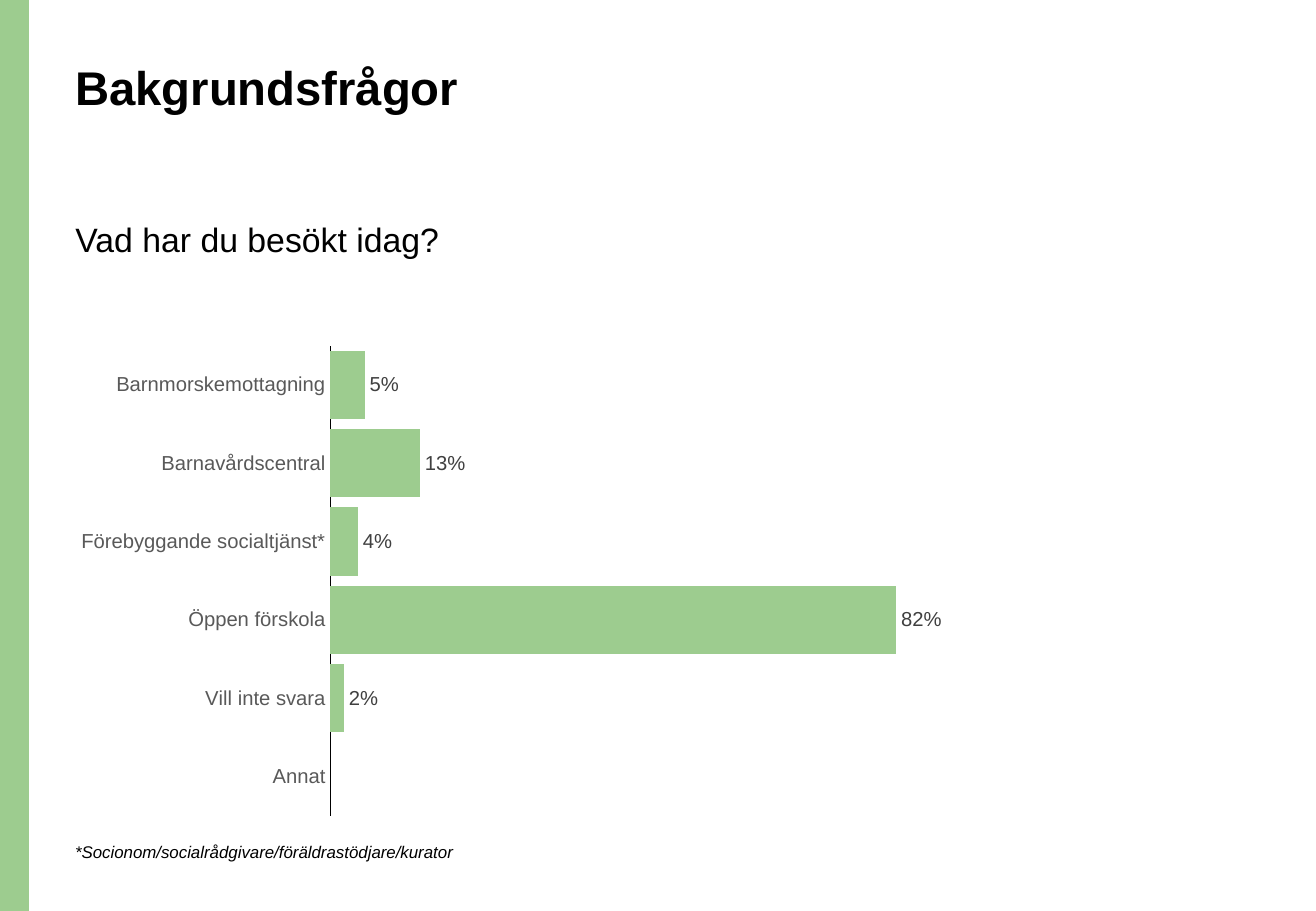
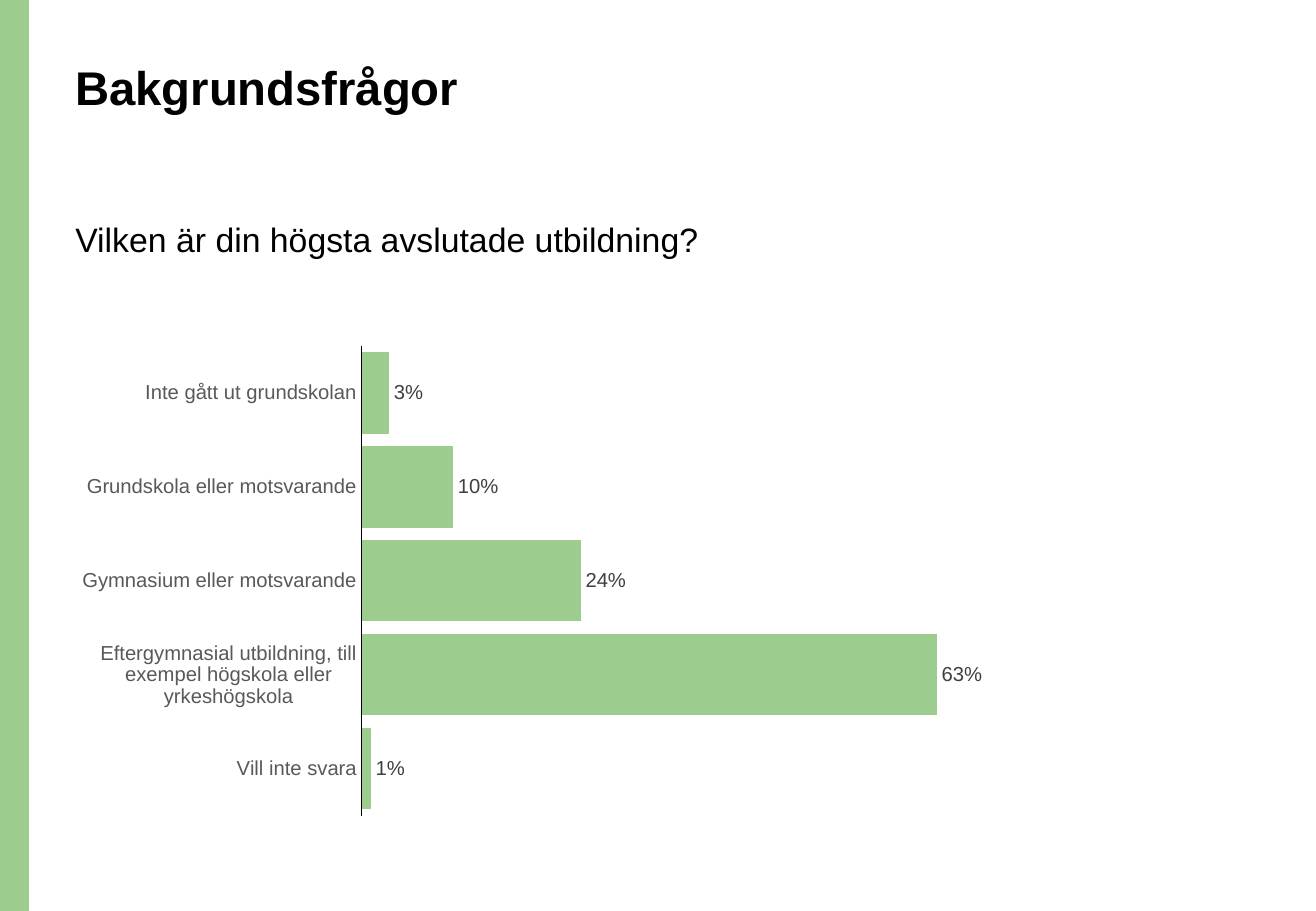
from pptx import Presentation
from pptx.chart.data import CategoryChartData
from pptx.dml.color import RGBColor
from pptx.enum.chart import XL_CHART_TYPE, XL_LABEL_POSITION, XL_TICK_MARK
from pptx.enum.shapes import MSO_SHAPE
from pptx.enum.text import MSO_ANCHOR, MSO_AUTO_SIZE, PP_ALIGN
from pptx.util import Inches, Pt
from lxml import etree

BAR = XL_CHART_TYPE.BAR_CLUSTERED
OUT_END = XL_LABEL_POSITION.OUTSIDE_END
NO_TICK = XL_TICK_MARK.NONE
RECT = MSO_SHAPE.RECTANGLE
TOP = MSO_ANCHOR.TOP
GROW = MSO_AUTO_SIZE.SHAPE_TO_FIT_TEXT
LEFT = PP_ALIGN.LEFT

GREEN = RGBColor(0x9D, 0xCC, 0x8F)
BLACK = RGBColor(0, 0, 0)
GREY = RGBColor(0x59, 0x59, 0x59)
DARK = RGBColor(0x40, 0x40, 0x40)
FONT = "Arial"

WIDTH, HEIGHT = Inches(10.83), Inches(7.5)
MARGIN = 4.8  # percent of the slide's width
TITLE = "Bakgrundsfrågor"

PAGES = [
    dict(
        ask="Vad har du besökt idag?",
        ask_w=60,
        chart_w=68.9,
        top=0.9,
        data={
            "Barnmorskemottagning": 0.05,
            "Barnavårdscentral": 0.13,
            "Förebyggande socialtjänst*": 0.04,
            "Öppen förskola": 0.82,
            "Vill inte svara": 0.02,
            "Annat": None,
        },
        note="*Socionom/socialrådgivare/föräldrastödjare/kurator",
    ),
    dict(
        ask="Vilken är din högsta avslutade utbildning?",
        ask_w=55.7,
        chart_w=72.7,
        top=0.7,
        data={
            "Inte gått ut grundskolan": 0.03,
            "Grundskola eller motsvarande": 0.1,
            "Gymnasium eller motsvarande": 0.24,
            "Eftergymnasial utbildning, till exempel högskola eller "
            "yrkeshögskola": 0.63,
            "Vill inte svara": 0.01,
        },
    ),
]


def box(x, y, w, h):
    """Turn percentages of the slide into left, top, width, height."""
    return (int(WIDTH * x / 100), int(HEIGHT * y / 100),
            int(WIDTH * w / 100), int(HEIGHT * h / 100))


def style(font, size, color=BLACK):
    font.name, font.size = FONT, Pt(size)
    font.color.rgb = color


def write(shape, area, text, size):
    """Place a shape and give it one left-aligned paragraph, returned."""
    shape.left, shape.top, shape.width, shape.height = area
    frame = shape.text_frame
    frame.text = text
    frame.word_wrap = True
    frame.vertical_anchor = TOP
    para = frame.paragraphs[0]
    para.alignment = LEFT
    style(para.font, size)
    return para


def add_title(slide):
    para = write(slide.shapes.title, box(MARGIN, 6.4, 86.2, 13.6), TITLE, 28)
    para.font.bold = True
    para.line_spacing = 0.9


def add_ask(slide, text, width):
    body = slide.placeholders[1]
    para = write(body, box(MARGIN, 23.9, width, 9.9), text, 20)
    para.line_spacing = 0.9
    para.space_before = Pt(10)
    props = para._p.get_or_add_pPr()
    props.set("marL", "0")
    props.set("indent", "0")
    tag = props.tag.replace("pPr", "buNone")
    props.find(props.tag.replace("pPr", "defRPr")).addprevious(
        etree.SubElement(props, tag))


def add_bars(slide, area, data, top):
    source = CategoryChartData(number_format="0%")
    source.categories = list(data)
    source.add_series("Series 1", list(data.values()))
    chart = slide.shapes.add_chart(BAR, *area, source).chart
    chart.has_legend = chart.has_title = False
    style(chart.font, 10)

    cats = chart.category_axis
    cats.reverse_order = True
    cats.has_major_gridlines = False
    cats.major_tick_mark = cats.minor_tick_mark = NO_TICK
    style(cats.tick_labels.font, 12, GREY)
    cats.format.line.color.rgb = BLACK
    cats.format.line.width = Pt(0.75)

    scale = chart.value_axis
    scale.visible = scale.has_major_gridlines = False
    scale.minimum_scale, scale.maximum_scale = 0, top

    plot = chart.plots[0]
    plot.gap_width = 15
    plot.vary_by_categories = False
    fill = plot.series[0].format.fill
    fill.solid()
    fill.fore_color.rgb = GREEN
    plot.has_data_labels = True
    labels = plot.data_labels
    labels.show_value = True
    labels.position = OUT_END
    labels.number_format = "0%"
    labels.number_format_is_linked = False
    style(labels.font, 12, DARK)


def add_note(slide, text):
    area = box(MARGIN, 91.7, 50, 3.6)
    note = slide.shapes.add_textbox(*area)
    write(note, area, text, 10).font.italic = True
    note.text_frame.auto_size = GROW


def add_band(slide):
    """Draw the side band and move it to the layout, for all slides."""
    band = slide.shapes.add_shape(RECT, *box(0, 0, 2.2, 100))
    band.shadow.inherit = False
    band.fill.solid()
    band.fill.fore_color.rgb = GREEN
    band.line.fill.background()
    slide.slide_layout.shapes.element.insert(2, band.element)


def add_page(deck, ask, ask_w, chart_w, top, data, note=None):
    slide = deck.slides.add_slide(deck.slide_layouts[1])
    add_title(slide)
    add_ask(slide, ask, ask_w)
    add_bars(slide, box(MARGIN, 36.9, chart_w, 53.7), data, top)
    if note:
        add_note(slide, note)
    return slide


def main():
    deck = Presentation()
    deck.slide_width, deck.slide_height = WIDTH, HEIGHT
    slides = [add_page(deck, **page) for page in PAGES]
    add_band(slides[0])
    deck.save("out.pptx")


if __name__ == "__main__":
    main()
